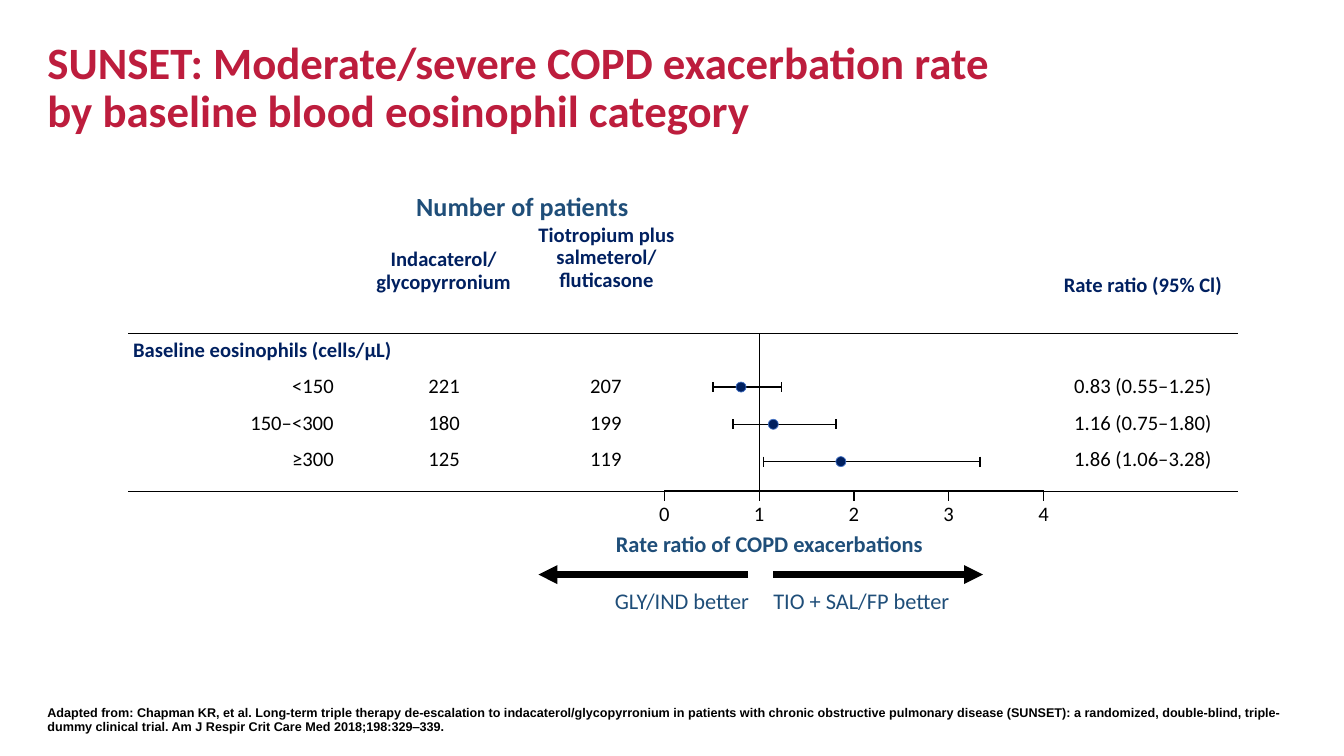
import lxml.etree
import pptx
import pptx.dml.color
import pptx.enum.shapes
import pptx.enum.text
import pptx.oxml.ns
import pptx.util

PX = 9144  # 100 px to the inch
THEME = {
    "title": "BD1D3D", "navy": "002060", "blue": "1F4E79", "black": "000000",
    "marker line": "4472C4",
    "font": "Calibri", "source font": "Arial",
    "title size": 32, "heading size": 18.7, "label size": 16,
    "body size": 14.7, "source size": 9,
}
ALIGN = pptx.enum.text.PP_ALIGN
qn = pptx.oxml.ns.qn


def add_text(text, left, top, width, height, size="body size", color="black",
             bold=False, align=ALIGN.CENTER, font="font", spacing=0.9,
             anchor=pptx.enum.text.MSO_ANCHOR.TOP):
    box = slide.shapes.add_textbox(left * PX, top * PX, width * PX, height * PX)
    frame = box.text_frame
    frame.word_wrap = True
    frame.vertical_anchor = anchor
    frame.margin_left = frame.margin_right = frame.margin_top = frame.margin_bottom = 0
    frame.text = text
    for paragraph in frame.paragraphs:
        paragraph.alignment = align
        paragraph.line_spacing = spacing
        paragraph.font.name = THEME[font]
        paragraph.font.size = pptx.util.Pt(THEME[size])
        paragraph.font.bold = bold
        paragraph.font.color.rgb = pptx.dml.color.RGBColor.from_string(THEME[color])


def add_line(x1, y1, x2, y2, weight=1, arrow=False):
    connector = slide.shapes.add_connector(
        pptx.enum.shapes.MSO_CONNECTOR.STRAIGHT, x1 * PX, y1 * PX, x2 * PX, y2 * PX)
    connector.line.width = pptx.util.Pt(weight)
    connector.line.color.rgb = pptx.dml.color.RGBColor.from_string(THEME["black"])
    if arrow:
        lxml.etree.SubElement(connector.line._get_or_add_ln(), qn("a:tailEnd"), type="triangle")
    lxml.etree.SubElement(connector._element.spPr, qn("a:effectLst"))


presentation = pptx.Presentation()
presentation.slide_width = 1333 * PX
presentation.slide_height = 750 * PX
slide = presentation.slides.add_slide(presentation.slide_layouts[6])

# Title and source
add_text("SUNSET: Moderate/severe COPD exacerbation rate\vby baseline blood eosinophil category",
         47, 40, 1239, 145, "title size", "title", True, ALIGN.LEFT)
add_text("Adapted from: Chapman KR, et al. Long-term triple therapy de-escalation to "
         "indacaterol/glycopyrronium in patients with chronic obstructive pulmonary disease "
         "(SUNSET): a randomized, double-blind, triple-dummy clinical trial. "
         "Am J Respir Crit Care Med 2018;198:329‒339.",
         47, 679, 1239, 49, "source size", "black", True, ALIGN.LEFT, "source font",
         anchor=pptx.enum.text.MSO_ANCHOR.BOTTOM)

# Table frame: a rule above the first row and below the last
column_widths = [290, 221, 359, 231]
row_heights = [91, 66]
table = slide.shapes.add_table(2, 4, 127 * PX, 331 * PX,
                               sum(column_widths) * PX, sum(row_heights) * PX).table
table.first_row = table.horz_banding = False
NO_STYLE = "{2D5ABB26-0587-4C30-8999-92F81FD0307C}"
table._tbl.tblPr.find(qn("a:tableStyleId")).text = NO_STYLE
for column, width in zip(table.columns, column_widths):
    column.width = width * PX
for row, height, edge in zip(table.rows, row_heights, ["a:lnT", "a:lnB"]):
    row.height = height * PX
    for cell in row.cells:
        cell.fill.background()
        border = lxml.etree.Element(qn(edge), w=str(pptx.util.Pt(1)))
        border_fill = lxml.etree.SubElement(border, qn("a:solidFill"))
        lxml.etree.SubElement(border_fill, qn("a:srgbClr"), val=THEME["black"])
        cell._tc.get_or_add_tcPr().insert(0, border)

# Column headings
add_text("Number of patients", 329, 192, 378, 28, "heading size", "blue", True)
for heading, left, top, width, height in [
    ("Indacaterol/\nglycopyrronium", 353, 247, 174, 44),
    ("Tiotropium plus salmeterol/\vfluticasone", 488, 223, 227, 67),
    ("Rate ratio (95% Cl)", 1020, 272, 227, 22),
]:
    add_text(heading, left, top, width, height, color="navy", bold=True)
add_text("Baseline eosinophils (cells/μL)", 132, 337, 442, 22,
         color="navy", bold=True, align=ALIGN.LEFT)

# Axis with ticks; the tick at 1 extends into the reference line
AXIS_LEFT, AXIS_UNIT, AXIS_Y = 659, 94, 487
add_line(AXIS_LEFT, AXIS_Y, AXIS_LEFT + 4 * AXIS_UNIT, AXIS_Y)
for value in range(5):
    x = AXIS_LEFT + value * AXIS_UNIT
    add_line(x, 331 if value == 1 else AXIS_Y, x, AXIS_Y + 10)
    add_text(str(value), x - 28, 500, 56, 22)
add_text("Rate ratio of COPD exacerbations", 574, 529, 378, 24, "label size", "blue", True)

# Subgroup rows: patient counts, rate ratio and confidence interval
subgroups = [
    ("<150", 221, 207, 0.83, 0.55, 1.25),
    ("150–<300", 180, 199, 1.16, 0.75, 1.80),
    ("≥300", 125, 119, 1.86, 1.06, 3.28),
]
for index, (category, dual, triple, *estimates) in enumerate(subgroups):
    top = 373 + 36 * index
    ratio, low, high = estimates
    add_text(category, 189, top, 142, 22, align=ALIGN.RIGHT)
    add_text(str(dual), 404, top, 73, 22)
    add_text(str(triple), 573, top, 56, 22)
    add_text(f"{ratio:.2f} ({low:.2f}–{high:.2f})", 1041, top, 185, 22)

    ratio_x, low_x, high_x = [round(654 + 97 * estimate) for estimate in estimates]
    y = 384 + 37 * index
    add_line(low_x, y, high_x, y)
    for end_x in (low_x, high_x):
        add_line(end_x, y - 5, end_x, y + 5)
    marker = slide.shapes.add_shape(pptx.enum.shapes.MSO_SHAPE.OVAL,
                                    (ratio_x - 5) * PX, (y - 5) * PX, 10 * PX, 10 * PX)
    marker.shadow.inherit = False
    marker.fill.solid()
    marker.fill.fore_color.rgb = pptx.dml.color.RGBColor.from_string(THEME["navy"])
    marker.line.color.rgb = pptx.dml.color.RGBColor.from_string(THEME["marker line"])
    marker.line.width = pptx.util.Pt(0.5)

# Direction of benefit
for label, left, width, align, start_x, tip_x in [
    ("GLY/IND better", 315, 428, ALIGN.RIGHT, 742, 534),
    ("TIO + SAL/FP better", 767, 410, ALIGN.LEFT, 767, 975),
]:
    add_line(start_x, 570, tip_x, 570, 4.5, arrow=True)
    add_text(label, left, 582, width, 27, "label size", "blue", align=align, spacing=1.0)

presentation.save("out.pptx")
